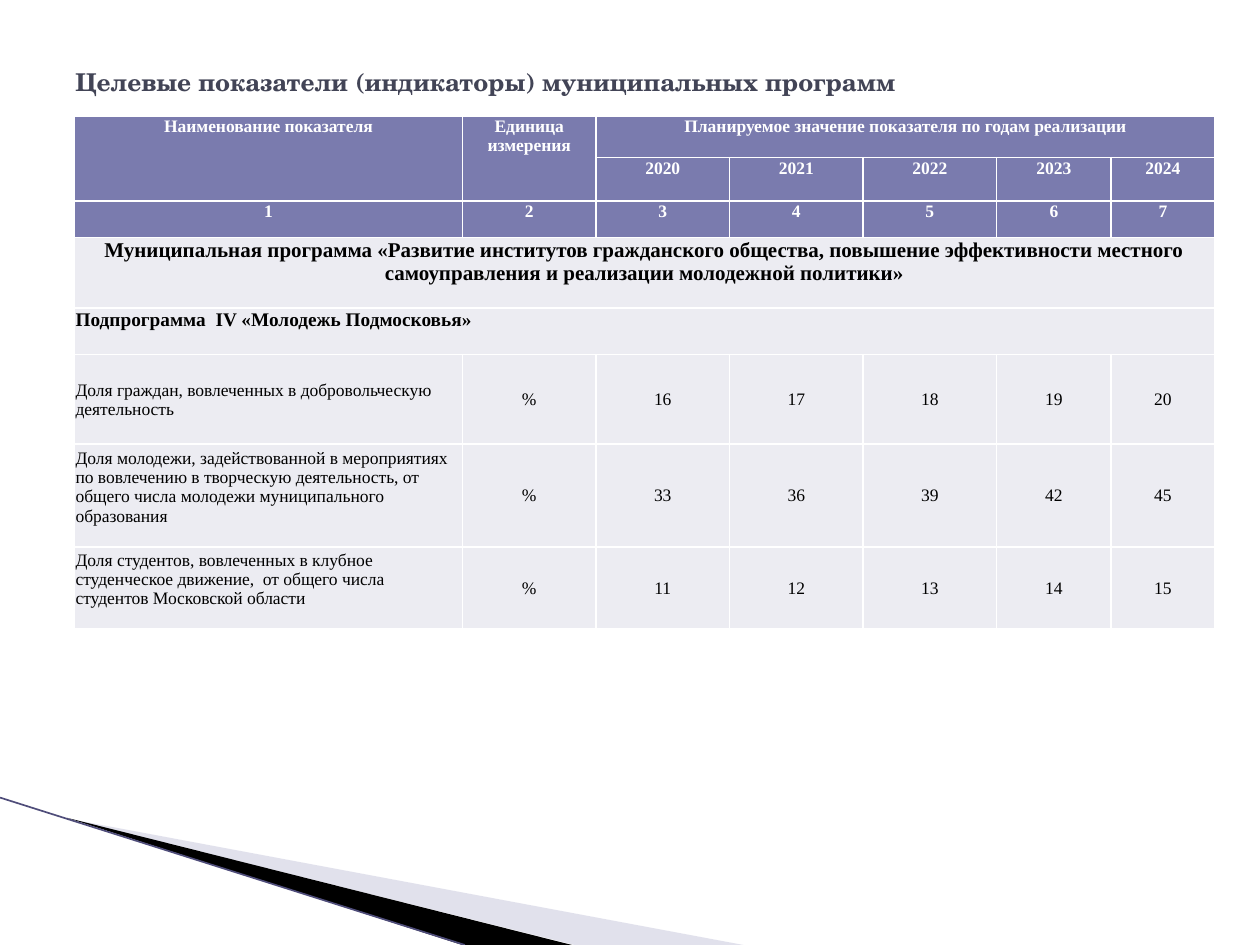
from dataclasses import dataclass
from typing import NamedTuple

from lxml import etree
from pptx import Presentation
from pptx.dml.color import RGBColor
from pptx.enum import shapes, text
from pptx.oxml import ns
from pptx.util import Inches, Pt


@dataclass(frozen=True)
class Theme:
    title: str = "424456"
    header: str = "7A7BAE"
    body: str = "ECECF2"
    white: str = "FFFFFF"
    black: str = "000000"
    pale: str = "B6B6D1"
    edge: str = "4F4D7A"
    title_font: str = "TeX Gyre Schola"
    table_font: str = "Times New Roman"
    title_size: int = 14
    program_size: int = 12
    subprogram_size: int = 11
    cell_size: int = 10


class CellStyle(NamedTuple):
    fill: str
    ink: str
    size: int
    bold: bool = True
    align: text.PP_ALIGN = text.PP_ALIGN.CENTER
    anchor: text.MSO_ANCHOR = text.MSO_ANCHOR.TOP


class Entry(NamedTuple):
    row: int
    column: int
    wording: str
    style: CellStyle
    rows: int = 1
    columns: int = 1
    bottom: float = 0


class Indicator(NamedTuple):
    name: str
    values: tuple[int, ...]
    bottom: float = 0


class Wedge(NamedTuple):
    points: tuple[tuple[float, float], ...]
    color: str
    opacity: int = 100


THEME = Theme()
HEADER = CellStyle(THEME.header, THEME.white, THEME.cell_size)
PROGRAM = CellStyle(THEME.body, THEME.black, THEME.program_size)
SUBPROGRAM = CellStyle(THEME.body, THEME.black, THEME.subprogram_size,
                       align=text.PP_ALIGN.LEFT)
VALUE = CellStyle(THEME.body, THEME.black, THEME.cell_size, bold=False,
                  anchor=text.MSO_ANCHOR.MIDDLE)
NAME = VALUE._replace(align=text.PP_ALIGN.LEFT)

COLUMN_WIDTHS = (3.08, 1.06, 1.06, 1.06, 1.06, 0.91, 0.82)
ROW_HEIGHTS = (0.33, 0.32, 0.29, 0.56, 0.37, 0.71, 0.77, 0.62)
YEARS = range(2020, 2025)
INDICATORS = (
    Indicator("Доля граждан, вовлеченных в добровольческую деятельность",
              (16, 17, 18, 19, 20)),
    Indicator("Доля молодежи, задействованной в мероприятиях по вовлечению "
              "в творческую деятельность, от общего числа молодежи "
              "муниципального образования", (33, 36, 39, 42, 45), 0.14),
    Indicator("Доля студентов, вовлеченных в клубное студенческое движение,  "
              "от общего числа студентов Московской области",
              (11, 12, 13, 14, 15), 0.14),
)
WEDGES = (
    Wedge(((0.55, 6.5), (5.9, 7.5), (4.56, 7.5)), THEME.pale, 40),
    Wedge(((0.53, 6.49), (4.54, 7.5), (3.67, 7.5)), THEME.black),
)


def rgb(value: str) -> RGBColor:
    return RGBColor.from_string(value)


def add_wedge(page, wedge: Wedge) -> None:
    start, *rest = [(Inches(x), Inches(y)) for x, y in wedge.points]
    builder = page.shapes.build_freeform(*start)
    builder.add_line_segments(rest, close=True)
    shape = builder.convert_to_shape()
    shape.shadow.inherit = False
    shape.line.fill.background()
    shape.fill.solid()
    shape.fill.fore_color.rgb = rgb(wedge.color)
    if wedge.opacity < 100:
        color = shape.fill._xPr.find(f".//{ns.qn('a:srgbClr')}")
        etree.SubElement(color, ns.qn("a:alpha"), val=str(wedge.opacity * 1000))


def add_edge(page) -> None:
    edge = page.shapes.add_connector(
        shapes.MSO_CONNECTOR.STRAIGHT,
        Inches(0), Inches(6.33), Inches(3.69), Inches(7.5))
    edge.line.color.rgb = rgb(THEME.edge)
    edge.line.width = Pt(0.95)
    etree.SubElement(edge._element.spPr, ns.qn("a:effectLst"))


def add_title(page, wording: str) -> None:
    box = page.shapes.add_textbox(Inches(0.5), Inches(0.3), Inches(9), Inches(0.69))
    frame = box.text_frame
    frame.word_wrap = True
    frame.vertical_anchor = text.MSO_ANCHOR.MIDDLE
    para = frame.paragraphs[0]
    para.text = wording
    para.font.name = THEME.title_font
    para.font.size = Pt(THEME.title_size)
    para.font.bold = True
    para.font.color.rgb = rgb(THEME.title)


def add_borders(cell) -> None:
    """Rule all four sides; borders must precede the fill in the cell."""
    properties = cell._tc.get_or_add_tcPr()
    for index, side in enumerate(("a:lnL", "a:lnR", "a:lnT", "a:lnB")):
        line = etree.Element(ns.qn(side), w=str(Pt(1)))
        fill = etree.SubElement(line, ns.qn("a:solidFill"))
        etree.SubElement(fill, ns.qn("a:srgbClr"), val=THEME.white)
        properties.insert(index, line)


def table_entries() -> list[Entry]:
    entries = [
        Entry(0, 0, "Наименование показателя", HEADER, rows=2),
        Entry(0, 1, "Единица измерения", HEADER, rows=2),
        Entry(0, 2, "Планируемое значение показателя по годам реализации",
              HEADER, columns=5),
        Entry(3, 0, "Муниципальная программа «Развитие институтов гражданского "
              "общества, повышение эффективности местного самоуправления и "
              "реализации молодежной политики»", PROGRAM, columns=7),
        Entry(4, 0, "Подпрограмма  IV «Молодежь Подмосковья»", SUBPROGRAM, columns=7),
    ]
    entries += [Entry(1, column, str(year), HEADER)
                for column, year in enumerate(YEARS, 2)]
    entries += [Entry(2, column, str(column + 1), HEADER)
                for column in range(len(COLUMN_WIDTHS))]
    for row, indicator in enumerate(INDICATORS, 5):
        entries.append(Entry(row, 0, indicator.name, NAME, bottom=indicator.bottom))
        entries += [Entry(row, column, str(value), VALUE)
                    for column, value in enumerate(("%", *indicator.values), 1)]
    return entries


def fill_entry(table, entry: Entry) -> None:
    style = entry.style
    origin = table.cell(entry.row, entry.column)
    origin.text = entry.wording
    for row in range(entry.row, entry.row + entry.rows):
        for column in range(entry.column, entry.column + entry.columns):
            cell = table.cell(row, column)
            cell.margin_left = cell.margin_right = cell.margin_top = Inches(0.01)
            cell.margin_bottom = Inches(entry.bottom)
            cell.vertical_anchor = style.anchor
            cell.fill.solid()
            cell.fill.fore_color.rgb = rgb(style.fill)
            add_borders(cell)
            para = cell.text_frame.paragraphs[0]
            para.alignment = style.align
            para.font.name = THEME.table_font
            para.font.size = Pt(style.size)
            para.font.bold = style.bold
            para.font.color.rgb = rgb(style.ink)
    if entry.rows * entry.columns > 1:
        origin.merge(table.cell(entry.row + entry.rows - 1,
                                entry.column + entry.columns - 1))


def add_indicator_table(page) -> None:
    table = page.shapes.add_table(
        len(ROW_HEIGHTS), len(COLUMN_WIDTHS), Inches(0.59), Inches(0.92),
        Inches(sum(COLUMN_WIDTHS)), Inches(sum(ROW_HEIGHTS))).table
    table.first_row = table.horz_banding = False
    for column, width in zip(table.columns, COLUMN_WIDTHS):
        column.width = Inches(width)
    for row, height in zip(table.rows, ROW_HEIGHTS):
        row.height = Inches(height)
    for entry in table_entries():
        fill_entry(table, entry)


def main() -> None:
    deck = Presentation()
    deck.slide_width, deck.slide_height = Inches(10), Inches(7.5)
    page = deck.slides.add_slide(deck.slide_layouts[6])
    for wedge in WEDGES:
        add_wedge(page, wedge)
    add_edge(page)
    add_title(page, "Целевые показатели (индикаторы) муниципальных программ")
    add_indicator_table(page)
    deck.save("out.pptx")


if __name__ == "__main__":
    main()
